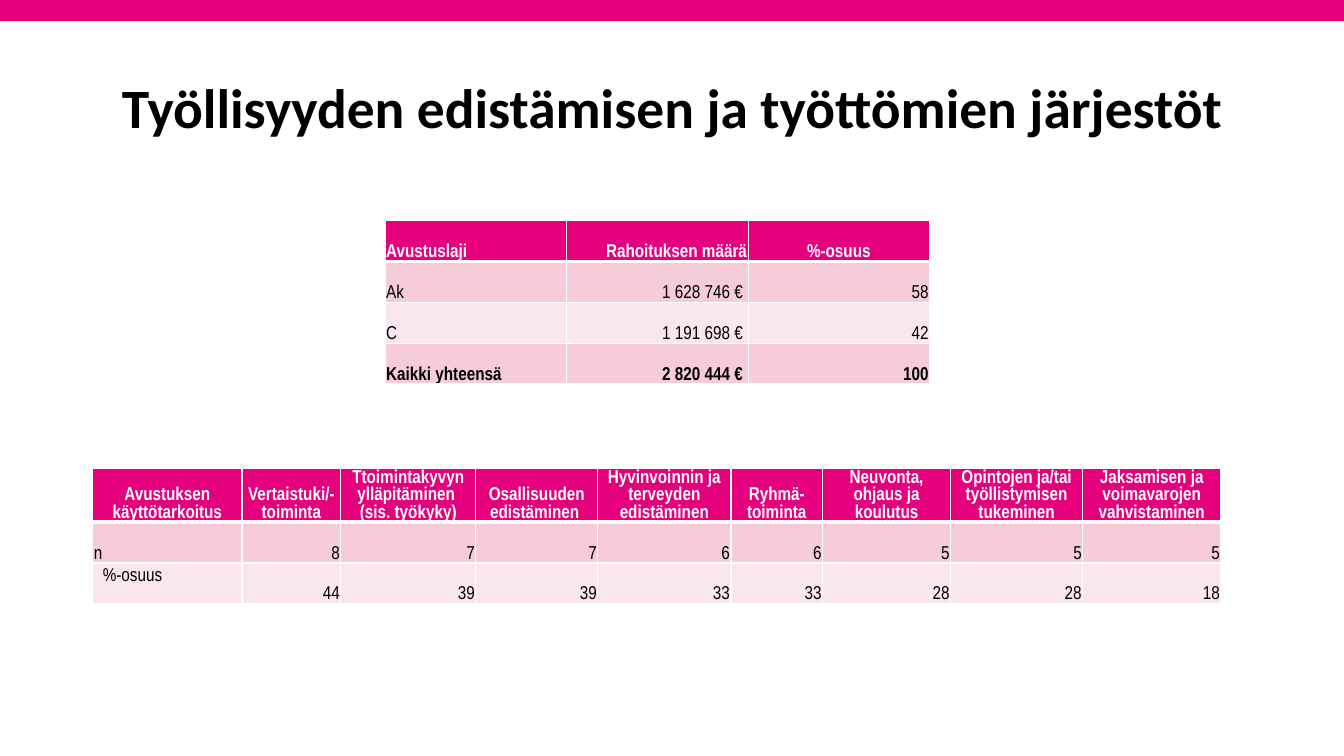
"""Build the slide on grants to employment promotion organisations."""
from lxml import etree
from pptx import Presentation
from pptx.dml.color import RGBColor
from pptx.enum.shapes import MSO_SHAPE
from pptx.enum.text import MSO_ANCHOR as Anchor, PP_ALIGN as Align
from pptx.oxml.ns import qn
from pptx.util import Inches, Pt

COLORS = {"pink": "E5007D", "band": "F5CCD7", "pale": "FAE7EC",
          "white": "FFFFFF", "black": "000000"}


def write(frame, text, size=13.3, font="Arial Narrow", color="black", bold=False,
          align=Align.LEFT, spacing=None):
    frame.text = text
    frame.word_wrap = True
    for paragraph in frame.paragraphs:
        paragraph.alignment = align
        paragraph.line_spacing = spacing
        for run in paragraph.runs:
            run.font.size = Pt(size)
            run.font.name = font
            run.font.bold = bold
            run.font.color.rgb = RGBColor.from_string(COLORS[color])


def add_border(cell, side, width):
    line = etree.SubElement(cell._tc.get_or_add_tcPr(), qn(f"a:{side}"), w=str(Pt(width)))
    fill = etree.SubElement(line, qn("a:solidFill"))
    etree.SubElement(fill, qn("a:srgbClr"), val=COLORS["white"])


deck = Presentation()
deck.slide_width, deck.slide_height = Inches(13.33), Inches(7.5)
slide = deck.slides.add_slide(deck.slide_layouts[5])

top_band = slide.shapes.add_shape(MSO_SHAPE.RECTANGLE, 0, 0, Inches(13.33), Inches(0.21))
top_band.shadow.inherit = False
top_band.fill.solid()
top_band.fill.fore_color.rgb = RGBColor.from_string(COLORS["pink"])
top_band.line.fill.background()

heading = slide.shapes.title
heading.left, heading.top = Inches(0.92), Inches(0.57)
heading.width, heading.height = Inches(11.5), Inches(1.05)
heading.text_frame.vertical_anchor = Anchor.MIDDLE
write(heading.text_frame, "Työllisyyden edistämisen ja työttömien järjestöt",
      size=39.6, font="Calibri", bold=True, align=Align.CENTER, spacing=0.9)

grant_types = [
    ["Avustuslaji", "Rahoituksen määrä", "%-osuus"],
    ["Ak", "1 628 746 € ", "58"],
    ["C", "1 191 698 € ", "42"],
    ["Kaikki yhteensä", "2 820 444 € ", "100"],
]
grant_purposes = [
    ["Avustuksen käyttötarkoitus", "Vertaistuki/-toiminta",
     "Ttoimintakyvyn ylläpitäminen \n(sis. työkyky)", "Osallisuuden edistäminen ",
     "Hyvinvoinnin ja terveyden edistäminen", "Ryhmä-toiminta",
     "Neuvonta, ohjaus ja koulutus", "Opintojen ja/tai työllistymisen tukeminen",
     "Jaksamisen ja voimavarojen vahvistaminen"],
    ["n", "8", "7", "7", "6", "6", "5", "5", "5"],
    ["%-osuus", "44", "39", "39", "33", "33", "28", "28", "18"],
]
type_widths = [1.8] * 3
purpose_widths = [1.48, 0.98, 1.34, 1.21, 1.32, 0.91, 1.27, 1.31, 1.37]
type_header = [Align.LEFT, Align.RIGHT, Align.CENTER]
purpose_header = [Align.CENTER] * 9
row_height = 0.405

for rows, widths, header_aligns, left, top in [
        (grant_types, type_widths, type_header, 3.82, 2.19),
        (grant_purposes, purpose_widths, purpose_header, 0.92, 4.65)]:
    grid = slide.shapes.add_table(
        len(rows), len(widths), Inches(left), Inches(top),
        Inches(sum(widths)), Inches(row_height * len(rows))).table
    for column, width in zip(grid.columns, widths):
        column.width = Inches(width)
    for r, values in enumerate(rows):
        is_header = r == 0
        for c, value in enumerate(values):
            cell = grid.cell(r, c)
            for side in ("lnL", "lnR", "lnT", "lnB"):
                thick = (is_header and side == "lnB") or (r == 1 and side == "lnT")
                add_border(cell, side, 3 if thick else 1)
            cell.fill.solid()
            shade = "pink" if is_header else "band" if r % 2 else "pale"
            cell.fill.fore_color.rgb = RGBColor.from_string(COLORS[shade])
            if (r, c) != (2, 0) or value != "%-osuus":
                cell.vertical_anchor = Anchor.BOTTOM
                cell.margin_left = cell.margin_right = cell.margin_top = Inches(0.01)
                cell.margin_bottom = 0
            body_align = Align.RIGHT if c else Align.LEFT
            write(cell.text_frame, value, color="white" if is_header else "black",
                  bold=is_header or values[0] == "Kaikki yhteensä",
                  align=header_aligns[c] if is_header else body_align)

deck.save("out.pptx")
